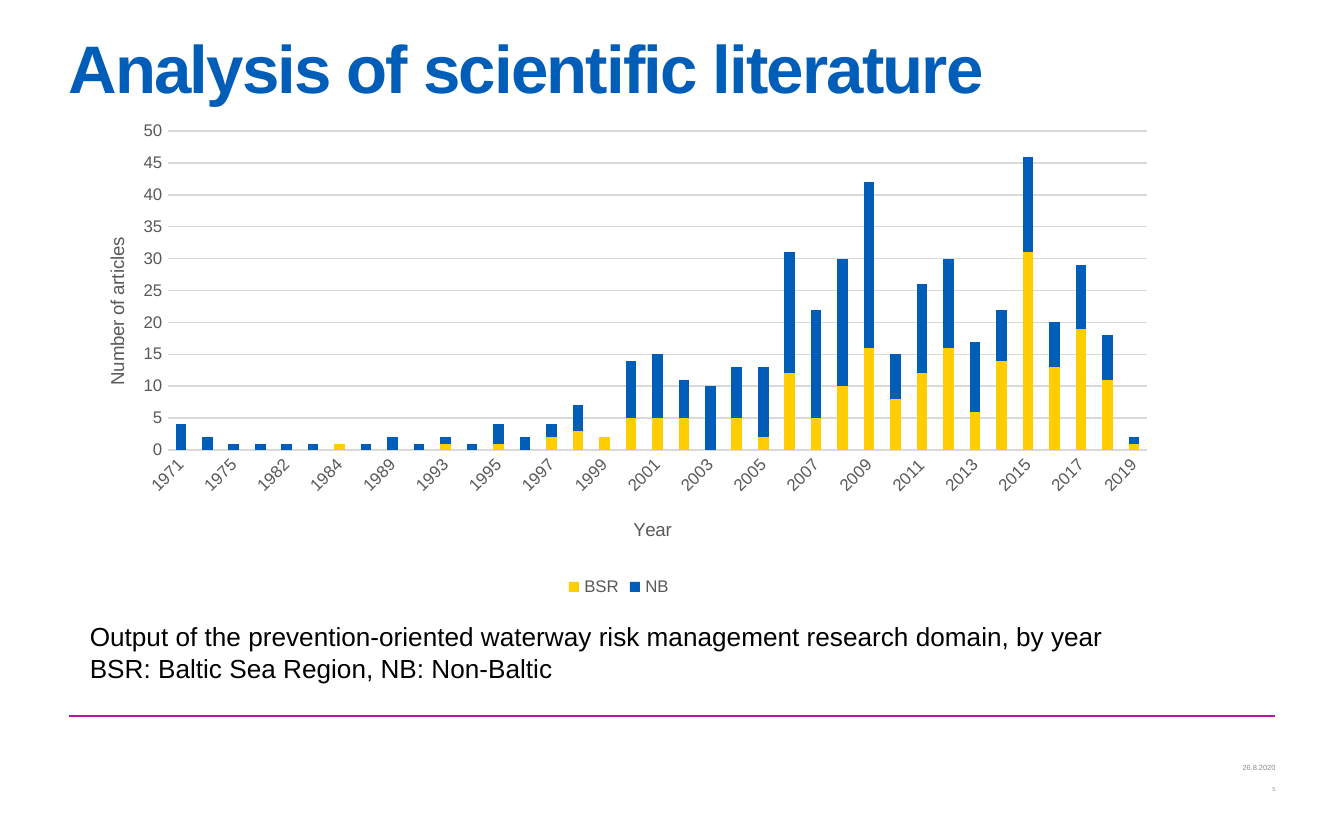
from lxml.etree import SubElement
from pptx import Presentation
from pptx.chart.data import CategoryChartData
from pptx.dml.color import RGBColor
from pptx.enum.chart import XL_CHART_TYPE, XL_LEGEND_POSITION, XL_TICK_MARK
from pptx.enum.text import MSO_ANCHOR, MSO_AUTO_SIZE, PP_ALIGN
from pptx.oxml import parse_xml
from pptx.oxml.ns import nsdecls, qn
from pptx.util import Inches, Pt

BLUE = RGBColor(0x00, 0x5E, 0xB8)
GOLD = RGBColor(0xFF, 0xCD, 0x00)
PURPLE = RGBColor(0xBB, 0x16, 0xA3)
BLACK = RGBColor(0x00, 0x00, 0x00)
DARK = RGBColor(0x59, 0x59, 0x59)
GREY = RGBColor(0x8C, 0x8C, 0x8C)
LIGHT = RGBColor(0xD9, 0xD9, 0xD9)


def set_font(font, size, color, bold=False):
    font.name = "Arial"
    font.size = Pt(size)
    font.bold = bold
    font.color.rgb = color


def make_layout(x, y, w=None, h=None):
    inner = '<c:layoutTarget val="inner"/>' if w else ""
    size = f'<c:w val="{w}"/><c:h val="{h}"/>' if w else ""
    return parse_xml(
        f'<c:layout {nsdecls("c")}><c:manualLayout>{inner}'
        '<c:xMode val="edge"/><c:yMode val="edge"/>'
        f'<c:x val="{x}"/><c:y val="{y}"/>{size}</c:manualLayout></c:layout>')


deck = Presentation()
deck.slide_width, deck.slide_height = Inches(10), Inches(6.25)
slide = deck.slides.add_slide(deck.slide_layouts[5])
shapes = slide.shapes

# Rule above the footer
rule = shapes.add_connector(1, Inches(0.51), Inches(5.33), Inches(9.49), Inches(5.33))
rule.line.color.rgb = PURPLE
rule.line.width = Pt(1)
SubElement(rule._element.spPr, qn("a:effectLst"))

# Title
title = shapes.title
title.left, title.top = Inches(0.51), Inches(0.29)
title.width, title.height = Inches(8.98), Inches(1.09)
frame = title.text_frame
frame.text = "Analysis of scientific literature"
frame.auto_size = MSO_AUTO_SIZE.NONE
frame.vertical_anchor = MSO_ANCHOR.TOP
frame.margin_left = frame.margin_right = frame.margin_top = frame.margin_bottom = 0
para = frame.paragraphs[0]
para.alignment = PP_ALIGN.LEFT
para.line_spacing = 0.85
run = para.runs[0]
set_font(run.font, 36, BLUE, True)
run.font._element.set("spc", "-100")

# Date and slide number
for text, top, height, size in [("26.8.2020", 5.63, 0.17, 4), ("5", 5.8, 0.15, 3)]:
    box = shapes.add_textbox(Inches(5.53), Inches(top), Inches(3.96), Inches(height))
    frame = box.text_frame
    frame.word_wrap = True
    frame.vertical_anchor = MSO_ANCHOR.MIDDLE
    frame.margin_right = 0
    frame.text = text
    para = frame.paragraphs[0]
    para.alignment = PP_ALIGN.RIGHT
    para.line_spacing = 0.9
    para.space_after = Pt(6)
    set_font(para.runs[0].font, size, GREY)

# Articles per year
years = [1971, 1974, 1975, 1978, 1982, 1983, 1984, 1986, 1989, 1990, *range(1993, 2020)]
data = CategoryChartData()
data.categories = [str(year) for year in years]
data.add_series("BSR", [0, 0, 0, 0, 0, 0, 1, 0, 0, 0, 1, 0, 1, 0, 2, 3, 2, 5, 5, 5, 0, 5, 2,
                        12, 5, 10, 16, 8, 12, 16, 6, 14, 31, 13, 19, 11, 1])
data.add_series("NB", [4, 2, 1, 1, 1, 1, 0, 1, 2, 1, 1, 1, 3, 2, 2, 4, 0, 9, 10, 6, 10, 8, 11,
                       19, 17, 20, 26, 7, 14, 14, 11, 8, 15, 7, 10, 7, 1])
chart = shapes.add_chart(XL_CHART_TYPE.COLUMN_STACKED, Inches(0.51), Inches(0.83),
                         Inches(8.19), Inches(3.65), data).chart
set_font(chart.font, 10, BLACK)
chart.has_title = False
plot = chart.plots[0]
plot.gap_width, plot.overlap = 150, 100
plot.vary_by_categories = False
for series, color in zip(plot.series, [GOLD, BLUE]):
    series.format.fill.solid()
    series.format.fill.fore_color.rgb = color

# Plot area
area = chart._chartSpace.chart.plotArea
for old in area.findall(qn("c:layout")):
    area.remove(old)
area.insert(0, make_layout(0.09, 0.04, 0.89, 0.65))

# Axes
across, up = chart.category_axis, chart.value_axis
for axis, text, x, y in [(across, "Year", 0.51, 0.82), (up, "Number of articles", 0.03, 0.25)]:
    axis.major_tick_mark = axis.minor_tick_mark = XL_TICK_MARK.NONE
    set_font(axis.tick_labels.font, 9, DARK)
    name = axis.axis_title
    name.text_frame.text = text
    set_font(name.text_frame.paragraphs[0].runs[0].font, 10, DARK)
    for old in name._element.findall(qn("c:layout")):
        name._element.remove(old)
    name._element.find(qn("c:tx")).addnext(make_layout(x, y))
across.format.line.color.rgb = LIGHT
across.format.line.width = Pt(0.75)
across._element.txPr.bodyPr.set("rot", "-2700000")
up.axis_title.text_frame._txBody.bodyPr.set("rot", "-5400000")
up.minimum_scale, up.maximum_scale, up.major_unit = 0, 50, 5
up.format.line.fill.background()
up.major_gridlines.format.line.color.rgb = LIGHT
up.major_gridlines.format.line.width = Pt(0.75)

# Legend
chart.has_legend = True
chart.legend.position = XL_LEGEND_POSITION.BOTTOM
chart.legend.include_in_layout = False
set_font(chart.legend.font, 9, DARK)

# Caption
box = shapes.add_textbox(Inches(0.57), Inches(4.57), Inches(8.66), Inches(0.57))
frame = box.text_frame
frame.word_wrap = True
frame.auto_size = MSO_AUTO_SIZE.SHAPE_TO_FIT_TEXT
frame.text = ("Output of the prevention-oriented waterway risk management research domain, by year\n"
              "BSR: Baltic Sea Region, NB: Non-Baltic")
for para in frame.paragraphs:
    set_font(para.runs[0].font, 14, BLACK)

deck.save("out.pptx")
